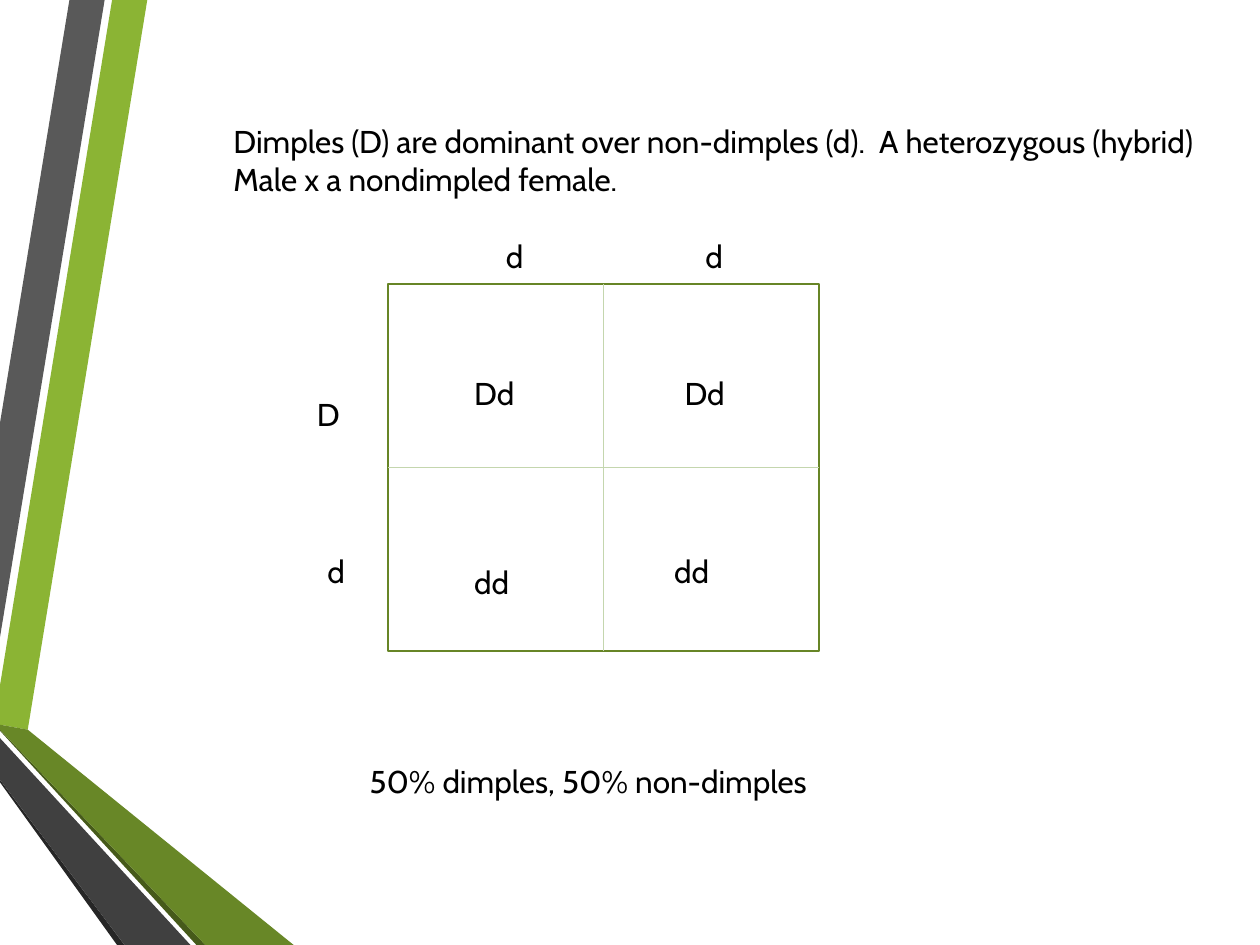
"""Build a slide with a Punnett square for the dimples cross."""
import dataclasses

import lxml.etree
import pptx
import pptx.dml.color
import pptx.enum.shapes
import pptx.enum.text
import pptx.oxml.ns
import pptx.util

Cm = pptx.util.Cm
Pt = pptx.util.Pt
Color = pptx.dml.color.RGBColor.from_string


@dataclasses.dataclass(frozen=True)
class Theme:
    font: str = "Cabin"
    size: float = 18
    text: str = "000000"
    frame: str = "678526"
    divider: str = "C4D6AE"
    light_green: str = "8BB434"
    green: str = "688727"
    dark_green: str = "465A1A"
    light_gray: str = "595959"
    gray: str = "404040"
    dark_gray: str = "262626"


theme = Theme()
frame_format = {
    "word_wrap": True,
    "auto_size": pptx.enum.text.MSO_AUTO_SIZE.NONE,
    "vertical_anchor": pptx.enum.text.MSO_ANCHOR.TOP,
}
font_format = {"name": theme.font, "size": Pt(theme.size), "bold": False}


def write(box, lines):
    for name, value in frame_format.items():
        setattr(box.text_frame, name, value)
    box.text_frame.text = "\n".join(lines)
    for para in box.text_frame.paragraphs:
        para.alignment = pptx.enum.text.PP_ALIGN.LEFT
        for span in para.runs:
            for name, value in font_format.items():
                setattr(span.font, name, value)
            span.font.color.rgb = Color(theme.text)


deck = pptx.Presentation()
deck.slide_width = Cm(25.4)
deck.slide_height = Cm(19.05)
page = deck.slides.add_slide(deck.slide_layouts[5])

ribbons = [
    (theme.light_green, [(0, 1382), (0, 1461), (56, 1471), (297, 0), (226, 0)]),
    (theme.light_gray, [(211, 0), (140, 0), (0, 853), (0, 1285)]),
    (theme.dark_gray, [(0, 1572), (0, 1577), (236, 1905), (251, 1905)]),
    (theme.dark_green, [(0, 1471), (0, 1473), (396, 1905), (414, 1905)]),
    (theme.green, [(0, 1471), (414, 1905), (592, 1905), (56, 1471), (0, 1461)]),
    (theme.gray, [(0, 1572), (251, 1905), (384, 1905), (0, 1488)]),
]
for color, points in ribbons:
    outline = page.shapes.build_freeform(*points[0], scale=Cm(0.01))
    outline.add_line_segments(points[1:], close=True)
    ribbon = outline.convert_to_shape()
    ribbon.shadow.inherit = False
    ribbon.fill.solid()
    ribbon.fill.fore_color.rgb = Color(color)
    ribbon.line.fill.background()

left, top, width, height = 7.83, 5.72, 8.68, 7.41
right, bottom = left + width, top + height
middle_x, middle_y = left + width / 2, top + height / 2

square = page.shapes.add_shape(
    pptx.enum.shapes.MSO_SHAPE.RECTANGLE, Cm(left), Cm(top), Cm(width), Cm(height)
)
square.shadow.inherit = False
square.fill.background()
square.line.color.rgb = Color(theme.frame)
square.line.width = Pt(1.25)

for ends in [(middle_x, top, middle_x, bottom), (left, middle_y, right, middle_y)]:
    divider = page.shapes.add_connector(
        pptx.enum.shapes.MSO_CONNECTOR.STRAIGHT, *map(Cm, ends)
    )
    divider.line.color.rgb = Color(theme.divider)
    divider.line.width = Pt(0.75)
    lxml.etree.SubElement(
        divider.element.spPr, pptx.oxml.ns.qn("a:effectLst")
    )

title = page.shapes.title
place = {"left": 4.45, "top": 2.33, "width": 21.13, "height": 1.8}
for name, value in place.items():
    setattr(title, name, Cm(value))
write(title, [
    "Dimples (D) are dominant over non-dimples (d).  A heterozygous (hybrid)",
    "Male x a nondimpled female.",
])

labels = [
    ("D", 6.14, 7.83, 1.4),
    ("d", 6.35, 11.01, 1.4),
    ("d", 9.95, 4.66, 1.4),
    ("d", 13.97, 4.66, 1.4),
    ("Dd", 9.31, 7.41, 1.4),
    ("Dd", 13.55, 7.41, 1.4),
    ("dd", 9.31, 11.22, 1.4),
    ("dd", 13.34, 11.01, 1.4),
    ("50% dimples, 50% non-dimples", 7.2, 15.24, 9.5),
]
for words, x, y, span_width in labels:
    box = page.shapes.add_textbox(Cm(x), Cm(y), Cm(span_width), Cm(1.02))
    write(box, [words])

deck.save("out.pptx")
